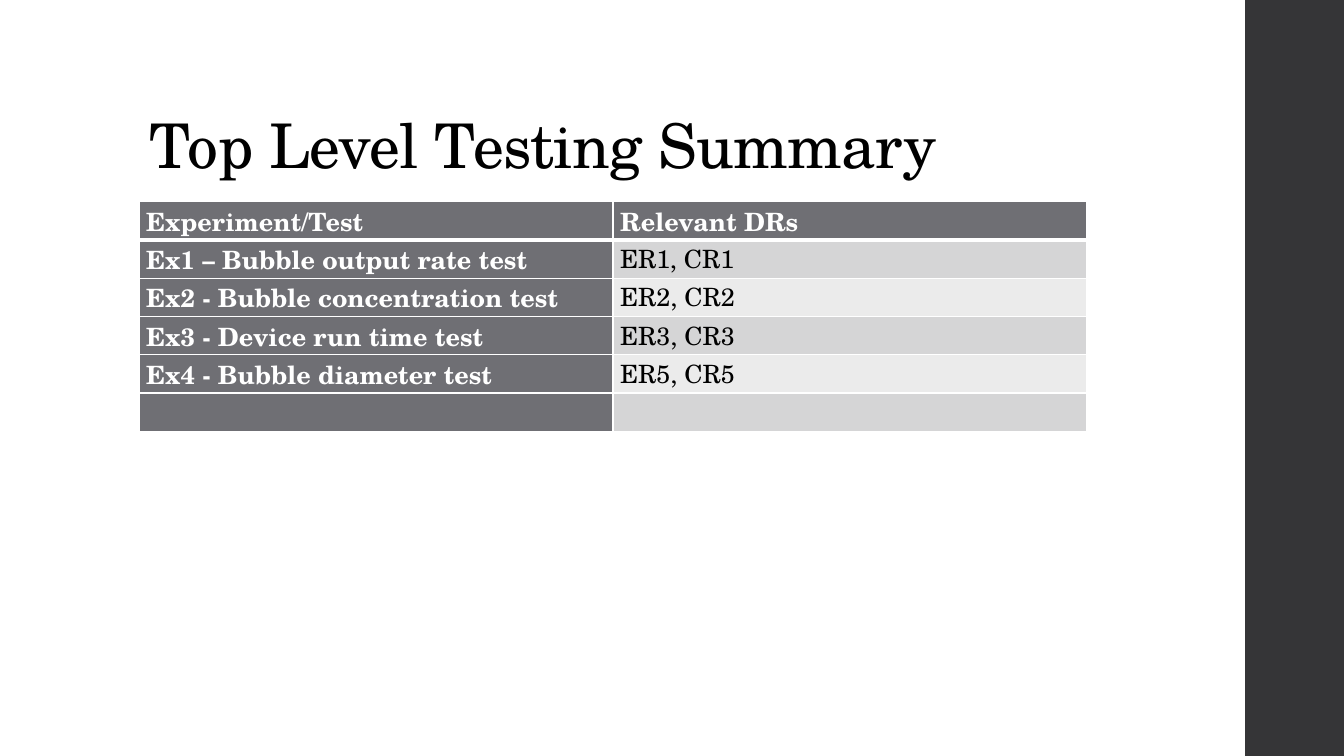
from lxml import etree
from pptx import Presentation
from pptx.dml.color import RGBColor
from pptx.enum.shapes import MSO_SHAPE
from pptx.enum.text import MSO_ANCHOR
from pptx.oxml.ns import qn
from pptx.util import Inches, Pt

RECT = MSO_SHAPE.RECTANGLE
BOTTOM = MSO_ANCHOR.BOTTOM
FONT = "TeX Gyre Schola"
WHITE, BLACK, GREY, DARK = "FFFFFF", "000000", "6F6F74", "353537"
BANDS = ("D5D5D6", "EBEBEB")
ROWS = [
    ("Experiment/Test", "Relevant DRs"),
    ("Ex1 – Bubble output rate test", "ER1, CR1"),
    ("Ex2 - Bubble concentration test", "ER2, CR2"),
    ("Ex3 - Device run time test", "ER3, CR3"),
    ("Ex4 - Bubble diameter test", "ER5, CR5"),
    ("", ""),
]


def paint(fill, color):
    """Give a fill one solid colour."""
    fill.solid()
    fill.fore_color.rgb = RGBColor.from_string(color)


def style(para, size, color, bold=False):
    """Format every run of a paragraph."""
    for run in para.runs:
        run.font.name = FONT
        run.font.size = Pt(size)
        run.font.bold = bold
        run.font.color.rgb = RGBColor.from_string(color)


def add_bar(slide):
    """Draw the dark bar at the right edge."""
    bar = slide.shapes.add_shape(RECT, Inches(12.35), 0, Inches(1), Inches(7.5))
    bar.shadow.inherit = False
    paint(bar.fill, DARK)
    bar.line.fill.background()


def add_title(slide, text):
    """Write the slide title, set slightly tight."""
    box = slide.shapes.add_textbox(Inches(1.38), Inches(0.4), Inches(10.6), Inches(1.45))
    frame = box.text_frame
    frame.word_wrap = True
    frame.vertical_anchor = BOTTOM
    frame.text = text
    para = frame.paragraphs[0]
    para.line_spacing = 0.9
    style(para, 44, BLACK)
    para.runs[0].font._element.set("spc", "-50")


def add_edges(cell, widths):
    """Put white borders on a cell, widths in points by side."""
    props = cell._tc.get_or_add_tcPr()
    for spot, (side, width) in enumerate(widths.items()):
        line = etree.Element(qn(f"a:ln{side}"), w=str(Pt(width)))
        solid = etree.SubElement(line, qn("a:solidFill"))
        etree.SubElement(solid, qn("a:srgbClr"), val=WHITE)
        props.insert(spot, line)


def fill_cell(cell, text, row, col):
    """Set the text, fill and borders of one table cell."""
    head = row == 0 or col == 0
    cell.margin_left = cell.margin_right = Inches(0.07)
    cell.margin_top = cell.margin_bottom = 0
    cell.text_frame.text = text
    style(cell.text_frame.paragraphs[0], 18, WHITE if head else BLACK, head)
    paint(cell.fill, GREY if head else BANDS[(row - 1) % 2])
    top, base = (3 if row == 1 else 1), (3 if row == 0 else 1)
    add_edges(cell, {"L": 1, "R": 1, "T": top, "B": base})


def add_tests(slide, rows):
    """Build the table of tests."""
    height = Inches(0.38)
    frame = slide.shapes.add_table(
        len(rows), 2, Inches(1.38), Inches(2), Inches(9.4), height * len(rows))
    for row, texts in enumerate(rows):
        for col, text in enumerate(texts):
            fill_cell(frame.table.cell(row, col), text, row, col)


def main():
    """Build and save the slide."""
    deck = Presentation()
    deck.slide_width, deck.slide_height = Inches(13.33), Inches(7.5)
    slide = deck.slides.add_slide(deck.slide_layouts[6])
    add_bar(slide)
    add_title(slide, "Top Level Testing Summary")
    add_tests(slide, ROWS)
    deck.save("out.pptx")


if __name__ == "__main__":
    main()
